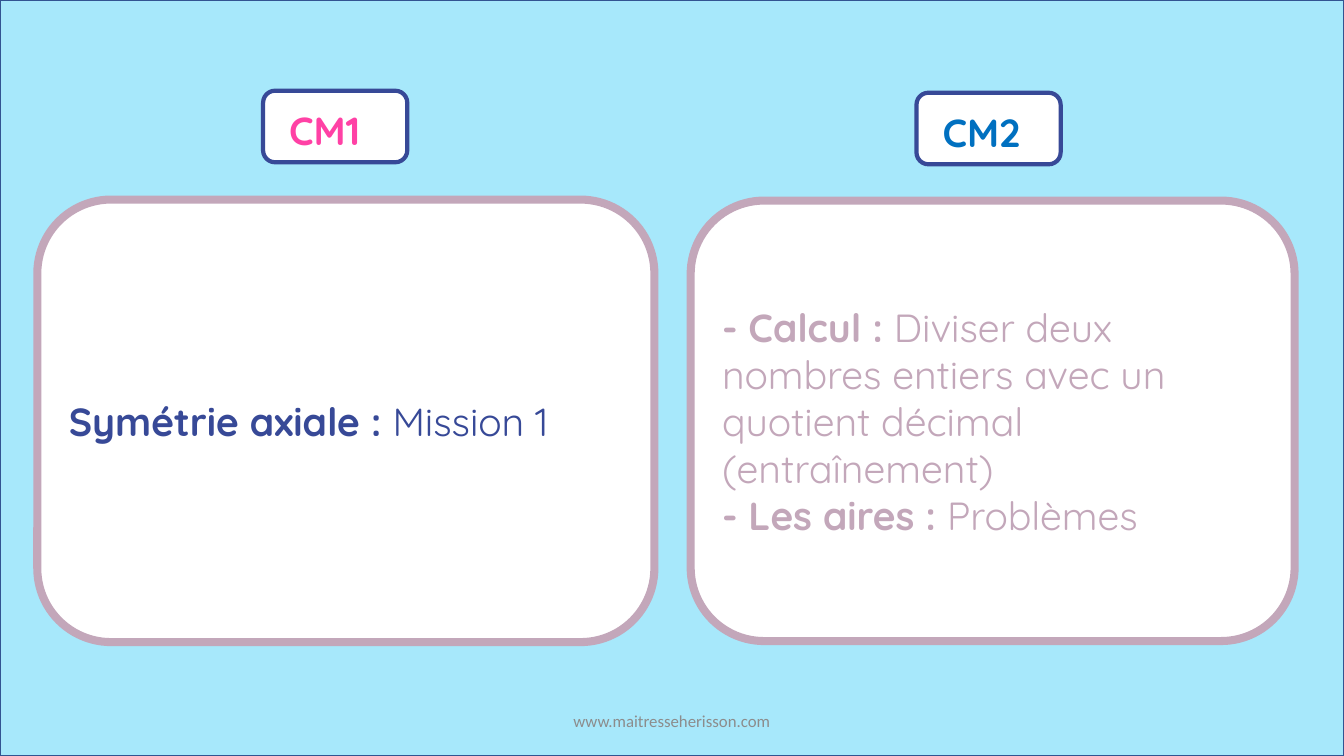
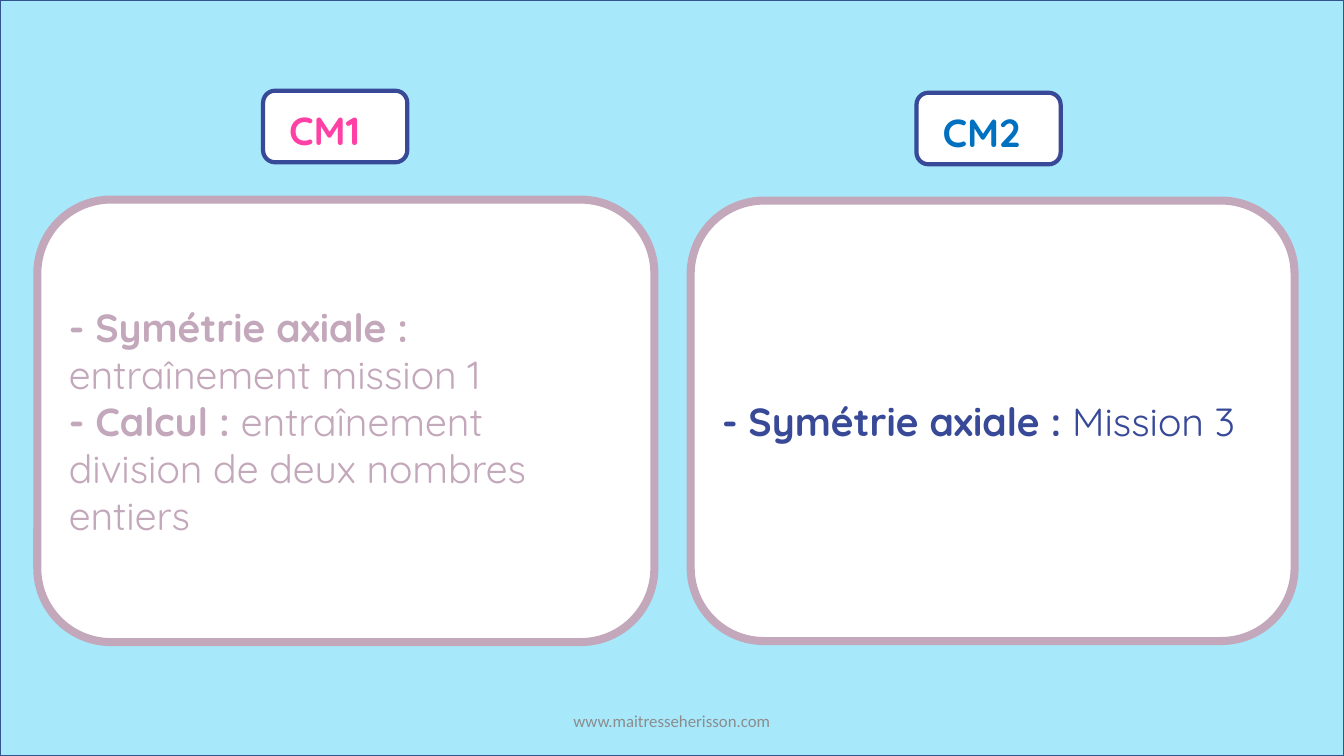
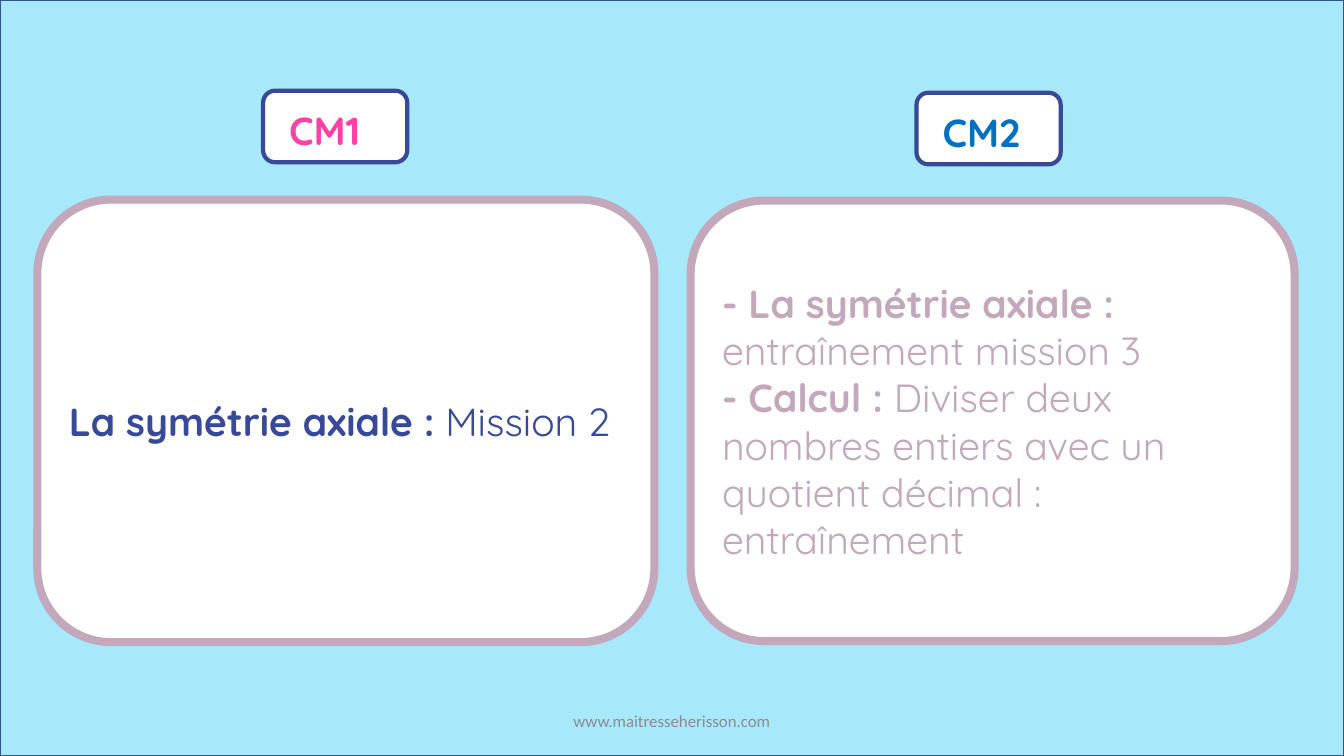
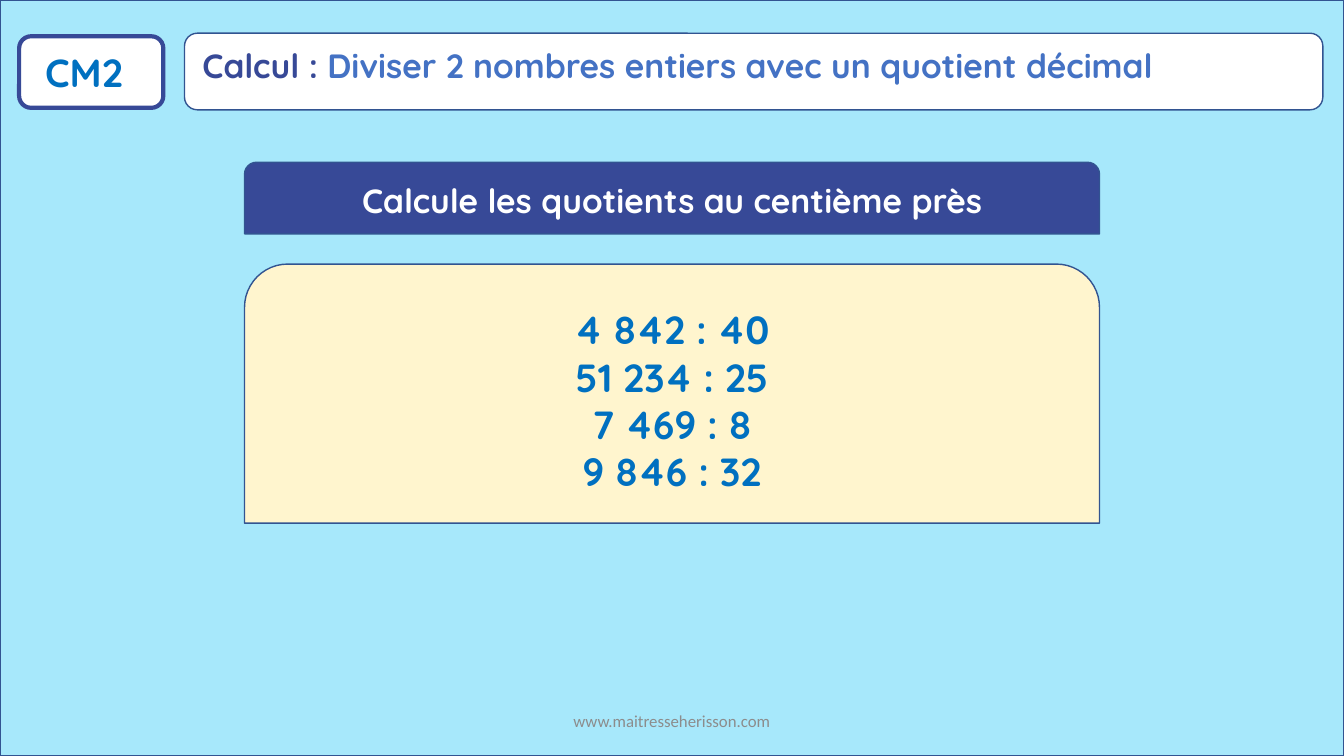
from pptx import Presentation
from pptx.dml.color import RGBColor
from pptx.enum.shapes import MSO_SHAPE
from pptx.enum.text import MSO_ANCHOR, PP_ALIGN
from pptx.util import Inches, Pt

# Shared look
WIDE, HIGH = 13.33, 7.5
SKY, EDGE, NAVY, MAUVE = "A7E8FB", "325491", "374997", "C3A7BA"
WHITE, CREAM, GREY = "FFFFFF", "FFF5CE", "8C8C8C"
PINK, BLUE, SOFT = "FF41A5", "0070C0", "4472C4"
FONT = "Quicksand"
SITE = "www.maitresseherisson.com"
ROUND, TAB = MSO_SHAPE.ROUNDED_RECTANGLE, MSO_SHAPE.ROUND_2_SAME_RECTANGLE
LEVELS = {"CM1": PINK, "CM2": BLUE}

# Each level: tag corner, panel frame
COLUMNS = [
    ("CM1", (2.61, 0.9), (0.37, 1.98, 6.12, 4.39)),
    ("CM2", (9.09, 0.92), (6.85, 1.99, 5.99, 4.37)),
]

# Each plan: one (colour, [(topic, task), ...]) per level
PLANS = [
    [(NAVY, [("Symétrie axiale : ", "Mission 1")]),
     (MAUVE, [("- Calcul : ", "Diviser deux nombres entiers avec un "
               "quotient décimal (entraînement)"),
              ("- Les aires : ", "Problèmes")])],
    [(MAUVE, [("- Symétrie axiale : ", "entraînement mission 1"),
              ("- Calcul : ", "entraînement division de deux nombres entiers")]),
     (NAVY, [("- Symétrie axiale : ", "Mission 3")])],
    [(NAVY, [("La symétrie axiale : ", "Mission 2")]),
     (MAUVE, [("- La symétrie axiale : ", "entraînement mission 3"),
              ("- Calcul : ", "Diviser deux nombres entiers avec un "
               "quotient décimal : entraînement")])],
]

TITLE = [("Calcul : ", NAVY, True),
         ("Diviser 2 nombres entiers avec un quotient décimal", SOFT, True)]
ORDER = "Calcule les quotients au centième près"
SUMS = ["4 842 : 40", "51 234 : 25", "7 469 : 8", "9 846 : 32"]


def rgb(code):
    return RGBColor.from_string(code)


def write(shape, lines, size=28, align=PP_ALIGN.LEFT,
          anchor=MSO_ANCHOR.MIDDLE, font=FONT):
    """Fill a shape with lines, each a list of (text, colour, bold) runs."""
    frame = shape.text_frame
    frame.word_wrap = True
    frame.vertical_anchor = anchor
    for i, line in enumerate(lines):
        para = frame.add_paragraph() if i else frame.paragraphs[0]
        para.alignment = align
        for text, color, bold in line:
            run = para.add_run()
            run.text = text
            run.font.name, run.font.size, run.font.bold = font, Pt(size), bold
            run.font.color.rgb = rgb(color)


def block(shapes, kind, box, fill, line=EDGE, width=1):
    shape = shapes.add_shape(kind, *map(Inches, box))
    shape.shadow.inherit = False
    shape.fill.solid()
    shape.fill.fore_color.rgb = rgb(fill)
    shape.line.color.rgb = rgb(line)
    shape.line.width = Pt(width)
    return shape


def label(shapes, box, lines, **style):
    write(shapes.add_textbox(*map(Inches, box)), lines, **style)


def tag(slide, level, left, top, drop=0.11):
    parts = slide.shapes.add_group_shape().shapes
    block(parts, ROUND, (left, top, 1.43, 0.71), WHITE, NAVY, 3)
    label(parts, (left + 0.16, top + drop, 1.1, 0.57),
          [[(level, LEVELS[level], True)]], anchor=MSO_ANCHOR.TOP)


def page(deck):
    slide = deck.slides.add_slide(deck.slide_layouts[6])
    block(slide.shapes, MSO_SHAPE.RECTANGLE, (0, 0, WIDE, HIGH), SKY)
    label(slide.shapes, ((WIDE - 4.5) / 2, 6.95, 4.5, 0.4),
          [[(SITE, GREY, False)]], size=12, align=PP_ALIGN.CENTER, font="Calibri")
    return slide


def plan(deck, cells):
    slide = page(deck)
    for (level, spot, box), (color, tasks) in zip(COLUMNS, cells):
        tag(slide, level, *spot)
        panel = block(slide.shapes, ROUND, box, WHITE, MAUVE, 5.75)
        write(panel, [[(topic, color, True), (task, color, False)]
                      for topic, task in tasks])


def drill(deck):
    slide = page(deck)
    tag(slide, "CM2", 0.19, 0.36, 0.07)
    # Title bar
    parts = slide.shapes.add_group_shape().shapes
    block(parts, ROUND, (1.83, 0.33, 11.29, 0.76), WHITE)
    label(parts, (1.91, 0.4, 11.21, 0.5), [TITLE], size=24, anchor=MSO_ANCHOR.TOP)
    # Instruction and sums, centred on the slide
    wide = 8.48
    left = (WIDE - wide) / 2
    head = block(slide.shapes, TAB, (left, 1.61, wide, 0.71), NAVY)
    write(head, [[(ORDER, WHITE, True)]], size=24, align=PP_ALIGN.CENTER)
    body = block(slide.shapes, TAB, (left, 2.62, wide, 2.57), CREAM)
    write(body, [[(item, BLUE, True)] for item in SUMS], align=PP_ALIGN.CENTER)


def main():
    deck = Presentation()
    deck.slide_width, deck.slide_height = Inches(WIDE), Inches(HIGH)
    for cells in PLANS:
        plan(deck, cells)
    drill(deck)
    deck.save("out.pptx")


if __name__ == "__main__":
    main()
